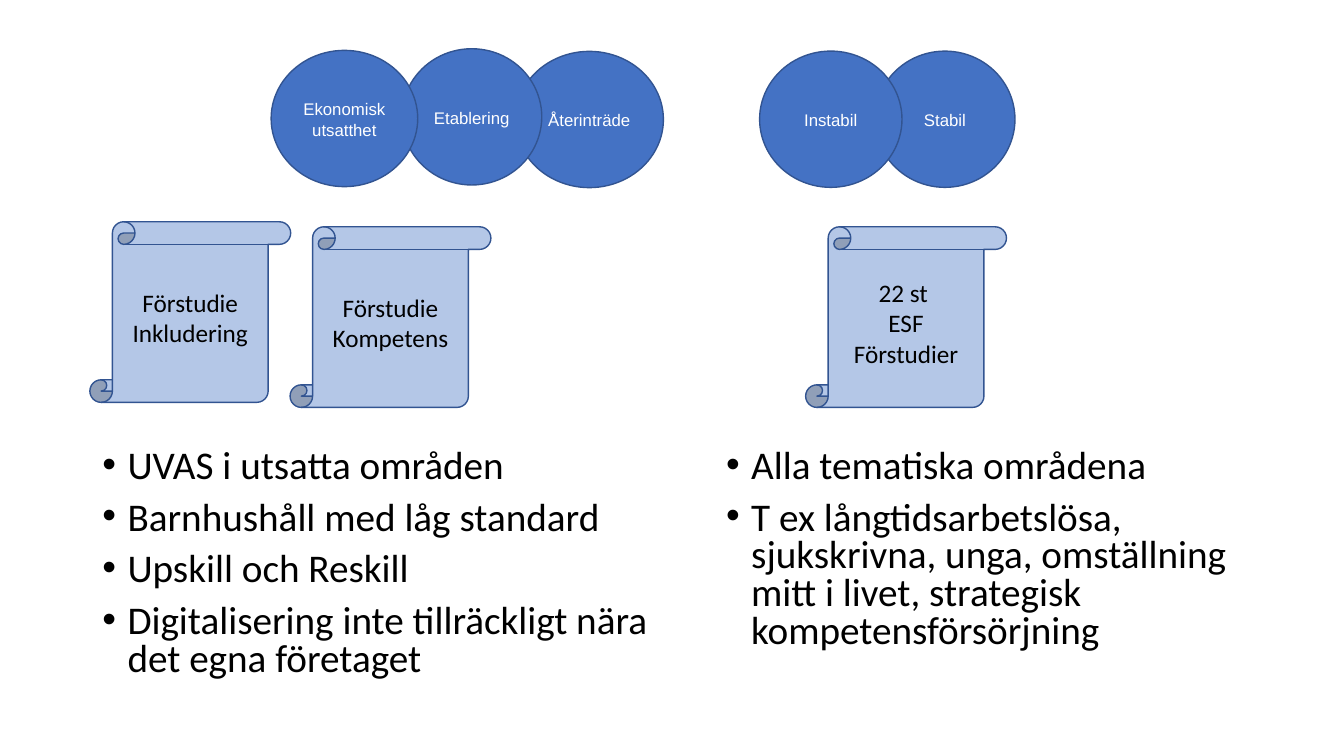
from pptx import Presentation
from pptx.dml.color import RGBColor as RGB
from pptx.enum.shapes import MSO_SHAPE as Kind
from pptx.enum.text import MSO_ANCHOR as Anchor, PP_ALIGN as Align
from pptx.oxml.ns import qn
from pptx.util import Pt
from lxml.etree import SubElement

BLUE = RGB(0x44, 0x72, 0xC4)
PALE = RGB(0xB4, 0xC7, 0xE7)
EDGE = RGB(0x32, 0x54, 0x91)
WHITE = RGB(0xFF, 0xFF, 0xFF)
BLACK = RGB(0, 0, 0)

DISC = dict(
    font=dict(name="Arial", size=Pt(12)),
    para=dict(alignment=Align.CENTER, line_spacing=1.07, space_after=Pt(8)))
ROLL = dict(
    font=dict(name="Calibri", size=Pt(18)),
    para=dict(alignment=Align.CENTER))
LIST = dict(
    font=dict(name="Calibri", size=Pt(28)),
    para=dict(alignment=Align.LEFT, line_spacing=0.8, space_before=Pt(10)))


def apply(item, look):
    for key, value in look.items():
        setattr(item, key, value)


def write(frame, lines, look, color):
    frame.word_wrap = True
    for i, line in enumerate(lines):
        para = frame.paragraphs[0] if i == 0 else frame.add_paragraph()
        run = para.add_run()
        run.text = line
        apply(para, look["para"])
        apply(run.font, look["font"])
        run.font.color.rgb = color


def draw(slide, kind, box, fill, lines, look, color):
    shape = slide.shapes.add_shape(kind, *map(Pt, box))
    shape.shadow.inherit = False
    shape.fill.solid()
    shape.fill.fore_color.rgb = fill
    shape.line.color.rgb = EDGE
    shape.line.width = Pt(1)
    shape.text_frame.vertical_anchor = Anchor.MIDDLE
    write(shape.text_frame, lines, look, color)


def add_chain(slide, left, top, high, discs):
    """Overlapping discs, the leftmost in front."""
    for dx, dy, wide, label in reversed(discs):
        box = (left + dx, top + dy, wide, high)
        draw(slide, Kind.OVAL, box, BLUE, [label], DISC, WHITE)


def add_roll(slide, left, top, lines):
    box = (left, top, 143.5, 129)
    draw(slide, Kind.VERTICAL_SCROLL, box, PALE, lines, ROLL, BLACK)


def add_list(slide, left, top, wide, high, lines):
    frame = slide.shapes.add_textbox(*map(Pt, (left, top, wide, high))).text_frame
    write(frame, lines, LIST, BLACK)
    for para in frame.paragraphs:
        props = para._p.get_or_add_pPr()
        props.set("marL", str(Pt(18)))
        props.set("indent", str(-Pt(18)))
        SubElement(props, qn("a:buFont"), typeface="Arial")
        SubElement(props, qn("a:buChar"), char="•")


def main():
    deck = Presentation()
    deck.slide_width, deck.slide_height = Pt(960), Pt(540)
    slide = deck.slides.add_slide(deck.slide_layouts[6])

    # Bullet lists
    add_list(slide, 66, 317.5, 408, 175, [
        "UVAS i utsatta områden",
        "Barnhushåll med låg standard",
        "Upskill och Reskill",
        "Digitalisering inte tillräckligt nära det egna företaget"])
    add_list(slide, 511.5, 317.5, 408, 175, [
        "Alla tematiska områdena",
        "T ex långtidsarbetslösa, sjukskrivna, unga, omställning "
        "mitt i livet, strategisk kompetensförsörjning"])

    # Chains of discs
    add_chain(slide, 542.6, 36.5, 97.3, [
        (0, 0, 101.7, "Instabil"),
        (82.4, 0, 100, "Stabil")])
    add_chain(slide, 193.7, 36, 97.3, [
        (0, 0, 104.7, "Ekonomisk utsatthet"),
        (93.3, -1.2, 100, "Etablering"),
        (174.4, 0.7, 105.8, "Återinträde")])

    # Scrolls
    add_roll(slide, 575.5, 162, ["22 st ", "ESF Förstudier"])
    add_roll(slide, 64.2, 158.4, ["Förstudie", "Inkludering"])
    add_roll(slide, 207.2, 162, ["Förstudie", "Kompetens"])

    deck.save("out.pptx")


if __name__ == "__main__":
    main()
